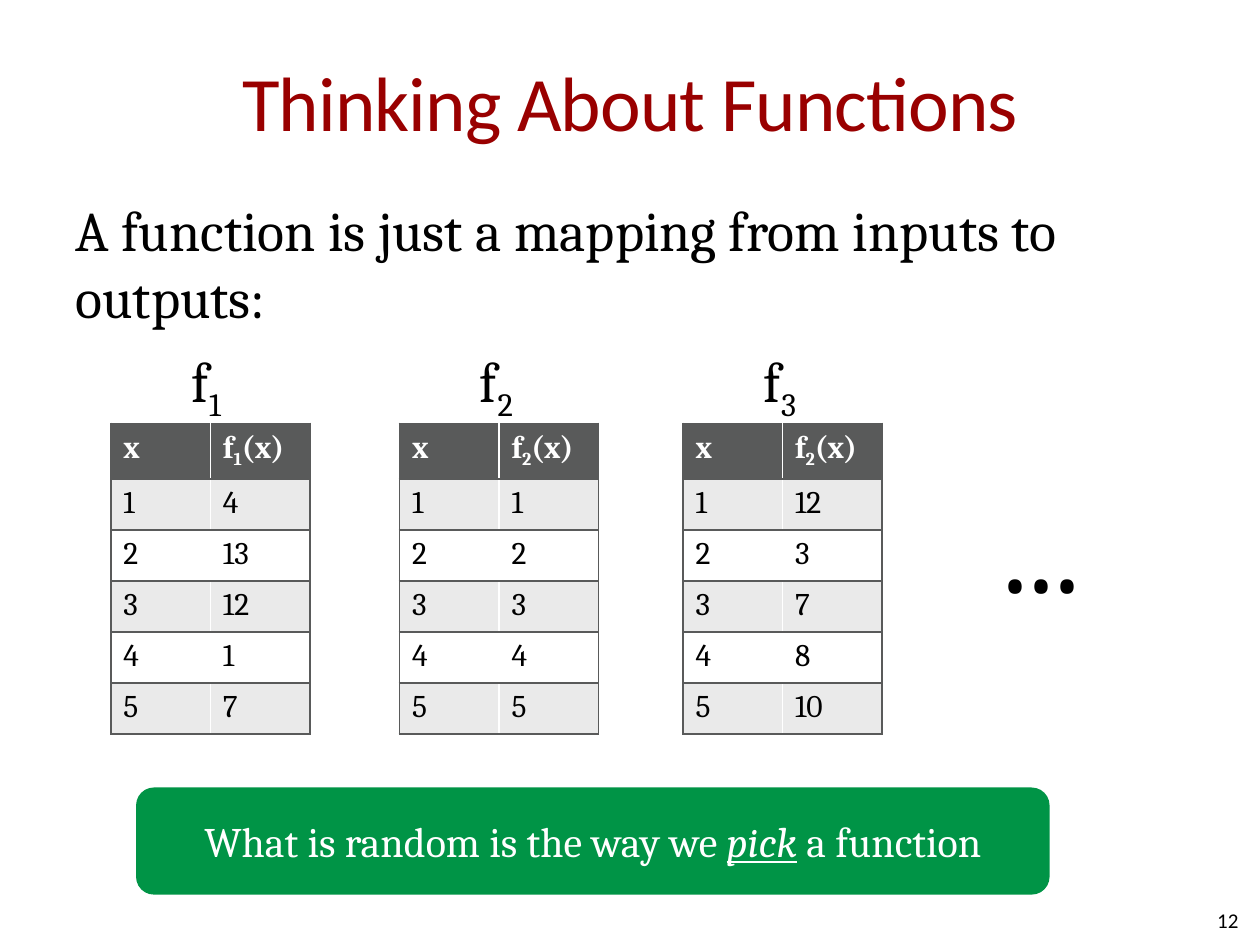
import pptx
import pptx.util
import pptx.dml.color
import pptx.enum.shapes
import pptx.enum.text
import pptx.oxml
import pptx.oxml.ns

# Grid of 40 columns by 30 rows on a 10 x 7.5 inch slide
COLS, ROWS = 40, 30
WIDE, HIGH = pptx.util.Inches(10), pptx.util.Inches(7.5)

HUES = {
    "title": "990000",
    "ink": "000000",
    "white": "FFFFFF",
    "head": "595A5A",
    "band": "EAEAEA",
    "green": "009446",
}
ALIGN = pptx.enum.text.PP_ALIGN
ANCHOR = pptx.enum.text.MSO_ANCHOR
FIT = pptx.enum.text.MSO_AUTO_SIZE

# Left edge, name, heading index and values of each function
MAPS = [
    (3.52, "1", "1", [4, 13, 12, 1, 7]),
    (12.68, "2", "2", [1, 2, 3, 4, 5]),
    (21.68, "3", "2", [12, 3, 7, 8, 10]),
]


def hue(name):
    return pptx.dml.color.RGBColor.from_string(HUES[name])


def place(box):
    x, y, w, h = box
    return (round(x * WIDE / COLS), round(y * HIGH / ROWS),
            round(w * WIDE / COLS), round(h * HIGH / ROWS))


def write(frame, text, size=18, font="Cambria", color="ink", bold=False,
          align=ALIGN.LEFT, before=0, track=0):
    """Text is a string or a list of strings and (string, style) pairs."""
    para = frame.paragraphs[0]
    para.alignment = align
    para.space_before = pptx.util.Pt(before)
    for part in [text] if isinstance(text, str) else text:
        words, style = (part, "") if isinstance(part, str) else part
        run = para.add_run()
        run.text = words
        run.font.size = pptx.util.Pt(size)
        run.font.name = font
        run.font.bold = bold
        run.font.color.rgb = hue(color)
        props = run._r.get_or_add_rPr()
        if style == "sub":
            props.set("baseline", "-25000")
        elif style == "stress":
            run.font.italic = run.font.underline = True
        if track:
            props.set("spc", str(round(track * 100)))


def pad(frame, side=0, edge=0):
    frame.margin_left = frame.margin_right = pptx.util.Inches(side)
    frame.margin_top = frame.margin_bottom = pptx.util.Inches(edge)


def label(slide, box, text, side=0, edge=0, wrap=True, anchor=ANCHOR.TOP, **form):
    frame = slide.shapes.add_textbox(*place(box)).text_frame
    pad(frame, side, edge)
    frame.word_wrap = wrap
    frame.auto_size = FIT.NONE if wrap else FIT.SHAPE_TO_FIT_TEXT
    frame.vertical_anchor = anchor
    write(frame, text, **form)


def rule(cell, sides):
    props = cell._tc.get_or_add_tcPr()
    for spot, side in enumerate(sides):
        props.insert(spot, pptx.oxml.parse_xml(
            f'<a:ln{side} {pptx.oxml.ns.nsdecls("a")} w="12700"><a:solidFill>'
            f'<a:srgbClr val="{HUES["head"]}"/></a:solidFill></a:ln{side}>'))


def mapping(slide, box, name, index, values):
    x, y, w, h = box
    drop = 2.44
    # Name above the table
    label(slide, (x + 2.56, y, 1.2, 2.16), ["f", (name, "sub")],
          size=32, wrap=False)
    # Table of inputs and outputs
    rows = [("x", ["f", (index, "sub"), "(x)"])]
    rows += [(str(n), str(v)) for n, v in enumerate(values, 1)]
    area = place((x, y + drop, w, h - drop))
    grid = slide.shapes.add_table(len(rows), 2, *area).table
    for r, row in enumerate(rows):
        for c, text in enumerate(row):
            cell = grid.cell(r, c)
            cell.fill.solid()
            cell.fill.fore_color.rgb = hue(
                "head" if r == 0 else "band" if r % 2 else "white")
            write(cell.text_frame, text, bold=r == 0,
                  color="ink" if r else "white")
            rule(cell, "RTB" if c else "LTB")


def banner(slide, box, text):
    kind = pptx.enum.shapes.MSO_SHAPE.ROUNDED_RECTANGLE
    shape = slide.shapes.add_shape(kind, *place(box))
    shape.shadow.inherit = False
    shape.fill.solid()
    shape.fill.fore_color.rgb = hue("green")
    shape.line.fill.background()
    frame = shape.text_frame
    pad(frame)
    frame.word_wrap = True
    frame.vertical_anchor = ANCHOR.MIDDLE
    write(frame, text, size=24, color="white", align=ALIGN.CENTER)


def main():
    deck = pptx.Presentation()
    deck.slide_width, deck.slide_height = WIDE, HIGH
    slide = deck.slides.add_slide(deck.slide_layouts[6])

    # Title, statement and page number
    label(slide, (2, 0.68, 36, 5), "Thinking About Functions", edge=0.05,
          anchor=ANCHOR.MIDDLE, size=44, font="Calibri", color="title",
          align=ALIGN.CENTER, track=-0.5)
    label(slide, (2, 6, 36, 5),
          "A function is just a mapping from inputs to outputs:",
          side=0.1, edge=0.05, size=32, before=6.4)
    label(slide, (30, 28.4, 9.32, 1.6), "12", anchor=ANCHOR.MIDDLE,
          size=12, font="Calibri", align=ALIGN.RIGHT)

    # Functions, and the sign that more follow
    for left, name, index, values in MAPS:
        mapping(slide, (left, 11, 6.32, 12.16), name, index, values)
    label(slide, (31.84, 14.84, 2.48, 4.84), "...", size=72, wrap=False)

    # Conclusion
    banner(slide, (4.32, 25, 29, 3.4),
           ["What is random is the way we ", ("pick", "stress"), " a function"])
    deck.save("out.pptx")


if __name__ == "__main__":
    main()
